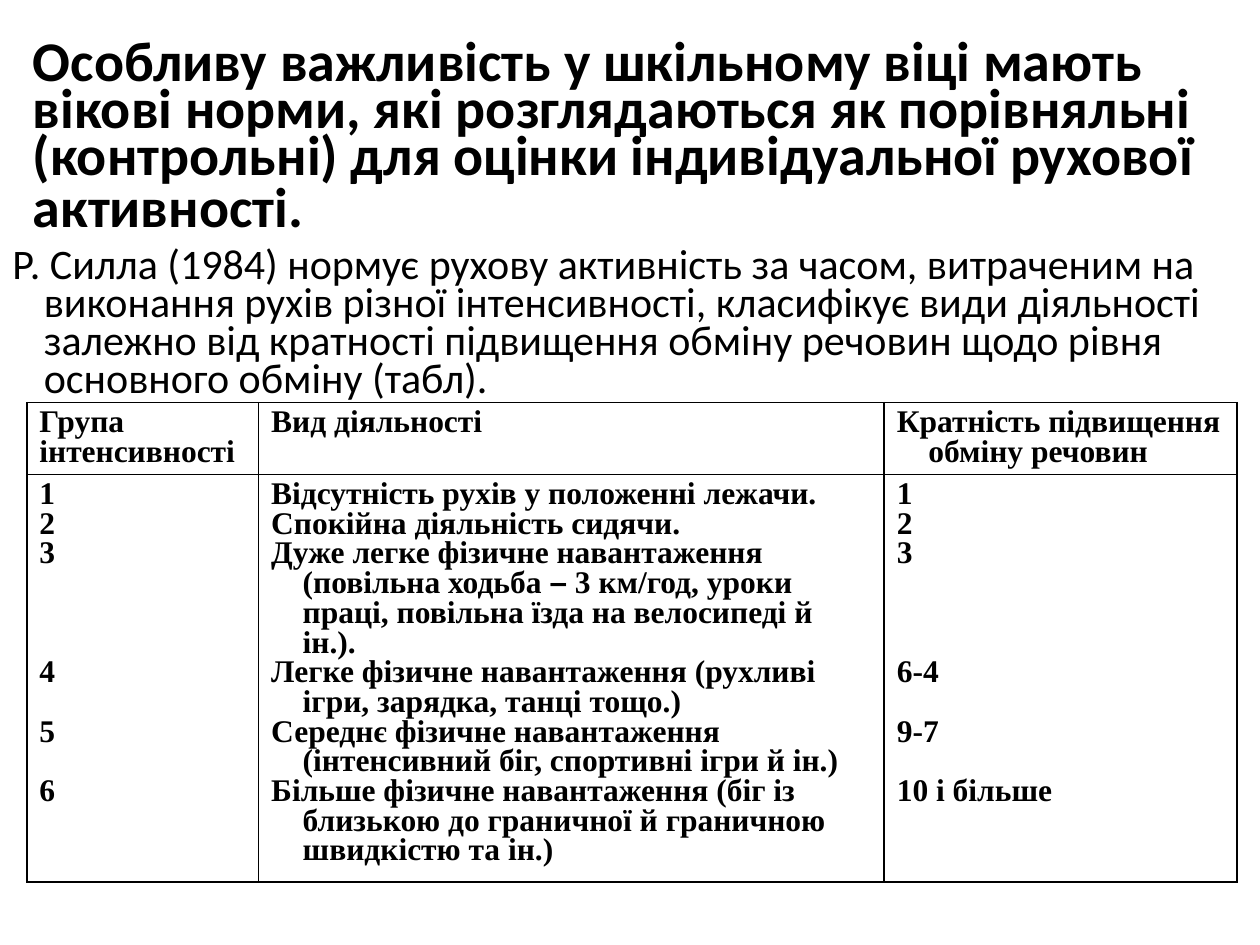
from lxml import etree
from pptx import Presentation
from pptx.dml.color import RGBColor
from pptx.enum.text import MSO_ANCHOR, MSO_AUTO_SIZE, PP_ALIGN
from pptx.oxml.ns import qn
from pptx.util import Pt

LEFT = PP_ALIGN.LEFT
TOP, MIDDLE = MSO_ANCHOR.TOP, MSO_ANCHOR.MIDDLE
NO_AUTOFIT = MSO_AUTO_SIZE.NONE
TITLE_ONLY = 5

COLORS = {"text": "000000", "border": "000000"}
BODY_FONT, TABLE_FONT, DASH_FONT = "Calibri", "Times New Roman", "Arial"
INDENT = 18
TABLE_LINE = 17  # height of one line of table text

TITLE = ("Особливу важливість у шкільному віці мають вікові норми, які розглядаються "
         "як порівняльні (контрольні) для оцінки індивідуальної рухової активності.")
INTRO = ("Р. Силла (1984) нормує рухову активність за часом, витраченим на виконання "
         "рухів різної інтенсивності, класифікує види діяльності залежно від кратності "
         "підвищення обміну речовин щодо рівня основного обміну (табл).")
HEADINGS = [["Група", "інтенсивності"], ["Вид діяльності"],
            ["Кратність підвищення обміну речовин"]]
ACTIVITIES = [
    "Відсутність рухів у положенні лежачи.",
    "Спокійна діяльність сидячи.",
    "Дуже легке фізичне навантаження (повільна ходьба – 3 км/год, уроки праці, "
    "повільна їзда на велосипеді й ін.).",
    "Легке фізичне навантаження (рухливі ігри, зарядка, танці тощо.)",
    "Середнє фізичне навантаження (інтенсивний біг, спортивні ігри й ін.)",
    "Більше фізичне навантаження (біг із близькою до граничної й граничною "
    "швидкістю та ін.)",
]
GROUPS = ["1", "2", "3", "4", "5", "6"]
RATIOS = ["1", "2", "3", "6-4", "9-7", "10 і більше"]
LINES_SKIPPED = [0, 0, 0, 3, 1, 1]  # lines left free above each group


class SlideBuilder:
    def __init__(self, slide):
        self.slide = slide

    def format_font(self, font, name, size, bold=False):
        font.name, font.size, font.bold = name, Pt(size), bold
        font.color.rgb = RGBColor.from_string(COLORS["text"])

    def format_frame(self, frame, anchor):
        frame.word_wrap = True
        frame.auto_size = NO_AUTOFIT
        frame.vertical_anchor = anchor

    def hang(self, paragraph):
        properties = paragraph._p.get_or_add_pPr()
        properties.set("marL", str(Pt(INDENT)))
        properties.set("indent", str(-Pt(INDENT)))

    def title(self, text, left, top, width, height):
        shape = self.slide.shapes.title
        shape.left, shape.top = Pt(left), Pt(top)
        shape.width, shape.height = Pt(width), Pt(height)
        self.format_frame(shape.text_frame, MIDDLE)
        paragraph = shape.text_frame.paragraphs[0]
        paragraph.alignment, paragraph.line_spacing = LEFT, 0.7
        # The larger closing space sets the height of the last line
        for words, size, bold in ((text, 32, True), (" ", 36, False)):
            run = paragraph.add_run()
            run.text = words
            self.format_font(run.font, BODY_FONT, size, bold)

    def text(self, text, left, top, width, height):
        shape = self.slide.shapes.add_textbox(Pt(left), Pt(top), Pt(width), Pt(height))
        self.format_frame(shape.text_frame, TOP)
        paragraph = shape.text_frame.paragraphs[0]
        paragraph.text = text
        paragraph.alignment, paragraph.line_spacing = LEFT, 0.75
        self.hang(paragraph)
        self.format_font(paragraph.font, BODY_FONT, 24)

    def borders(self, cell):
        properties = cell._tc.get_or_add_tcPr()
        for position, side in enumerate(("a:lnL", "a:lnR", "a:lnT", "a:lnB")):
            line = etree.Element(qn(side), w=str(Pt(1)))
            fill = etree.SubElement(line, qn("a:solidFill"))
            etree.SubElement(fill, qn("a:srgbClr"), val=COLORS["border"])
            properties.insert(position, line)

    def cell(self, cell, lines, skipped):
        cell.fill.background()
        self.borders(cell)
        frame = cell.text_frame
        for index, (line, gap) in enumerate(zip(lines, skipped)):
            paragraph = frame.add_paragraph() if index else frame.paragraphs[0]
            paragraph.alignment, paragraph.line_spacing = LEFT, 0.85
            if gap:
                paragraph.space_before = Pt(gap * TABLE_LINE)
            self.hang(paragraph)
            self.format_font(paragraph.font, TABLE_FONT, 18, True)
            before, dash, after = line.partition("–")
            for words in filter(None, (before, dash, after)):
                run = paragraph.add_run()
                run.text = words
                if words == dash:
                    run.font.name = DASH_FONT

    def table(self, rows, left, top, widths, heights):
        frame = self.slide.shapes.add_table(
            len(rows), len(widths), Pt(left), Pt(top), Pt(sum(widths)), Pt(sum(heights)))
        table = frame.table
        table.first_row = table.horz_banding = False
        for column, width in zip(table.columns, widths):
            column.width = Pt(width)
        for row, height, contents in zip(table.rows, heights, rows):
            row.height = Pt(height)
            for cell, (lines, skipped) in zip(row.cells, contents):
                self.cell(cell, lines, skipped)


def main():
    presentation = Presentation()
    presentation.slide_width, presentation.slide_height = Pt(720), Pt(540)
    slide = presentation.slides.add_slide(presentation.slide_layouts[TITLE_ONLY])
    builder = SlideBuilder(slide)

    # Heading and introduction
    builder.title(TITLE, 11.5, 20, 708.5, 121)
    builder.text(INTRO, 0, 139, 704, 90)

    # Activity norms
    no_gaps = [0] * len(GROUPS)
    rows = [
        [(lines, no_gaps) for lines in HEADINGS],
        [(GROUPS, LINES_SKIPPED), (ACTIVITIES, no_gaps), (RATIOS, LINES_SKIPPED)],
    ]
    builder.table(rows, 15.3, 230, [132.5, 357.5, 201.5], [41, 233])

    presentation.save("out.pptx")


if __name__ == "__main__":
    main()
